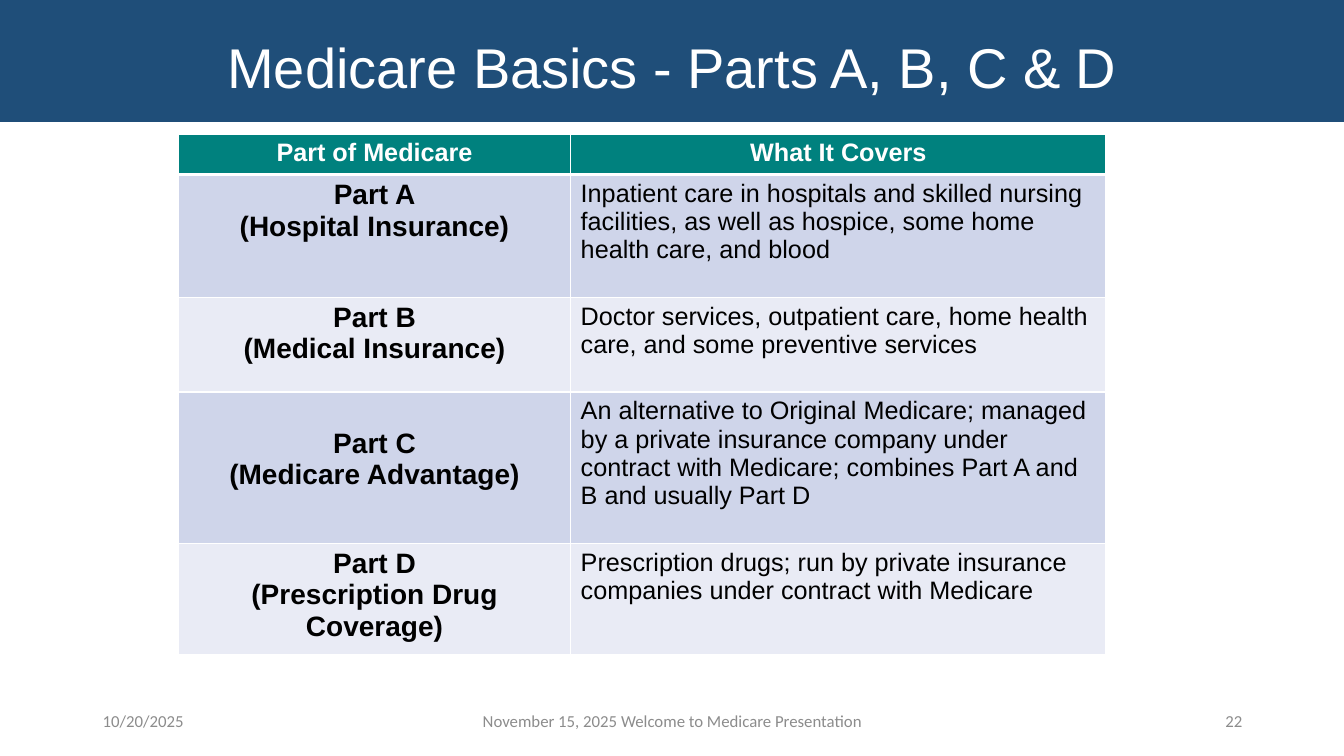
from dataclasses import dataclass

from lxml import etree
from pptx import Presentation
from pptx.dml.color import RGBColor
from pptx.enum.shapes import MSO_SHAPE
from pptx.enum.text import MSO_ANCHOR, PP_ALIGN
from pptx.oxml.ns import qn
from pptx.util import Inches, Pt

LEFT, CENTER, RIGHT = PP_ALIGN.LEFT, PP_ALIGN.CENTER, PP_ALIGN.RIGHT
MIDDLE = MSO_ANCHOR.MIDDLE
RECTANGLE = MSO_SHAPE.RECTANGLE

NAVY = RGBColor(0x1F, 0x4E, 0x79)
TEAL = RGBColor(0x00, 0x81, 0x7E)
BAND_DARK = RGBColor(0xCF, 0xD5, 0xEA)
BAND_LIGHT = RGBColor(0xE9, 0xEB, 0xF5)
WHITE = RGBColor(0xFF, 0xFF, 0xFF)
BLACK = RGBColor(0x00, 0x00, 0x00)
GRAY = RGBColor(0x8C, 0x8C, 0x8C)

TITLE_FONT = {"name": "Arial", "size": Pt(40), "bold": False}
HEADER_FONT = {"name": "Arial", "size": Pt(18), "bold": True}
PART_FONT = {"name": "Arial", "size": Pt(20), "bold": True}
COVERAGE_FONT = {"name": "Arial", "size": Pt(18), "bold": False}
FOOTER_FONT = {"name": "Calibri", "size": Pt(12), "bold": False}


@dataclass
class MedicarePart:
    name: str
    covers: str
    height: float
    top_margin: float = 0.05


@dataclass
class Footer:
    text: str
    left: float
    width: float
    align: PP_ALIGN


HEADINGS = ("Part of Medicare", "What It Covers")
HEADER_HEIGHT = 0.4
COLUMN_WIDTHS = (3.89, 5.31)
PARTS = (
    MedicarePart("Part A\v(Hospital Insurance)",
                 "Inpatient care in hospitals and skilled nursing facilities, "
                 "as well as hospice, some home health care, and blood", 1.22),
    MedicarePart("Part B\v(Medical Insurance)",
                 "Doctor services, outpatient care, home health care, "
                 "and some preventive services", 0.94),
    MedicarePart("Part C\n(Medicare Advantage)",
                 "An alternative to Original Medicare; managed by a private "
                 "insurance company under contract with Medicare; combines "
                 "Part A and B and usually Part D", 1.5, 0.36),
    MedicarePart("Part D\v(Prescription Drug Coverage)",
                 "Prescription drugs; run by private insurance companies "
                 "under contract with Medicare", 1.1),
)
FOOTERS = (
    Footer("November 15, 2025 Welcome to Medicare Presentation", 4.42, 4.5, CENTER),
    Footer("10/20/2025", 0.92, 3, LEFT),
    Footer("22", 9.42, 3, RIGHT),
)


def write(tf, text: str, font: dict, color: RGBColor, align: PP_ALIGN) -> None:
    tf.word_wrap = True
    tf.text = text
    for p in tf.paragraphs:
        p.alignment = align
        for r in p.runs:
            for key, value in font.items():
                setattr(r.font, key, value)
            r.font.color.rgb = color


def set_borders(cell, bottom: float) -> None:
    """Draw white 1 pt cell borders, with the bottom one at its own width."""
    tc_pr = cell._tc.get_or_add_tcPr()
    widths = {"a:lnL": 1, "a:lnR": 1, "a:lnT": 1, "a:lnB": bottom}
    for i, (tag, width) in enumerate(widths.items()):
        ln = etree.Element(qn(tag), w=str(Pt(width)))
        fill = etree.SubElement(ln, qn("a:solidFill"))
        etree.SubElement(fill, qn("a:srgbClr"), val=str(WHITE))
        tc_pr.insert(i, ln)


def fill_cell(cell, text: str, font: dict, color: RGBColor, align: PP_ALIGN,
              fill: RGBColor, bottom: float = 1) -> None:
    write(cell.text_frame, text, font, color, align)
    cell.fill.solid()
    cell.fill.fore_color.rgb = fill
    set_borders(cell, bottom)


def add_title(s) -> None:
    sp = s.shapes.add_shape(RECTANGLE, 0, 0, Inches(13.33), Inches(1.21))
    sp.shadow.inherit = False
    sp.fill.solid()
    sp.fill.fore_color.rgb = NAVY
    sp.line.fill.background()
    tf = sp.text_frame
    tf.vertical_anchor = MIDDLE
    tf.margin_top, tf.margin_bottom = Inches(0.1), 0
    write(tf, "Medicare Basics - Parts A, B, C & D", TITLE_FONT, WHITE, CENTER)


def add_parts_table(s) -> None:
    heights = [HEADER_HEIGHT] + [part.height for part in PARTS]
    table = s.shapes.add_table(
        len(heights), len(COLUMN_WIDTHS), Inches(1.77), Inches(1.33),
        Inches(sum(COLUMN_WIDTHS)), Inches(sum(heights))).table
    for column, width in zip(table.columns, COLUMN_WIDTHS):
        column.width = Inches(width)
    for row, height in zip(table.rows, heights):
        row.height = Inches(height)

    for col, heading in enumerate(HEADINGS):
        fill_cell(table.cell(0, col), heading, HEADER_FONT, WHITE, CENTER, TEAL, 3)
    for row, part in enumerate(PARTS, 1):
        band = BAND_DARK if row % 2 else BAND_LIGHT
        name_cell = table.cell(row, 0)
        fill_cell(name_cell, part.name, PART_FONT, BLACK, CENTER, band)
        name_cell.margin_top = Inches(part.top_margin)
        fill_cell(table.cell(row, 1), part.covers, COVERAGE_FONT, BLACK, LEFT, band)


def add_footer(s, footer: Footer) -> None:
    sp = s.shapes.add_textbox(Inches(footer.left), Inches(6.95),
                              Inches(footer.width), Inches(0.4))
    sp.text_frame.vertical_anchor = MIDDLE
    write(sp.text_frame, footer.text, FOOTER_FONT, GRAY, footer.align)


def main() -> None:
    prs = Presentation()
    prs.slide_width, prs.slide_height = Inches(13.33), Inches(7.5)
    s = prs.slides.add_slide(prs.slide_layouts[6])
    add_title(s)
    add_parts_table(s)
    for footer in FOOTERS:
        add_footer(s, footer)
    prs.save("out.pptx")


if __name__ == "__main__":
    main()
